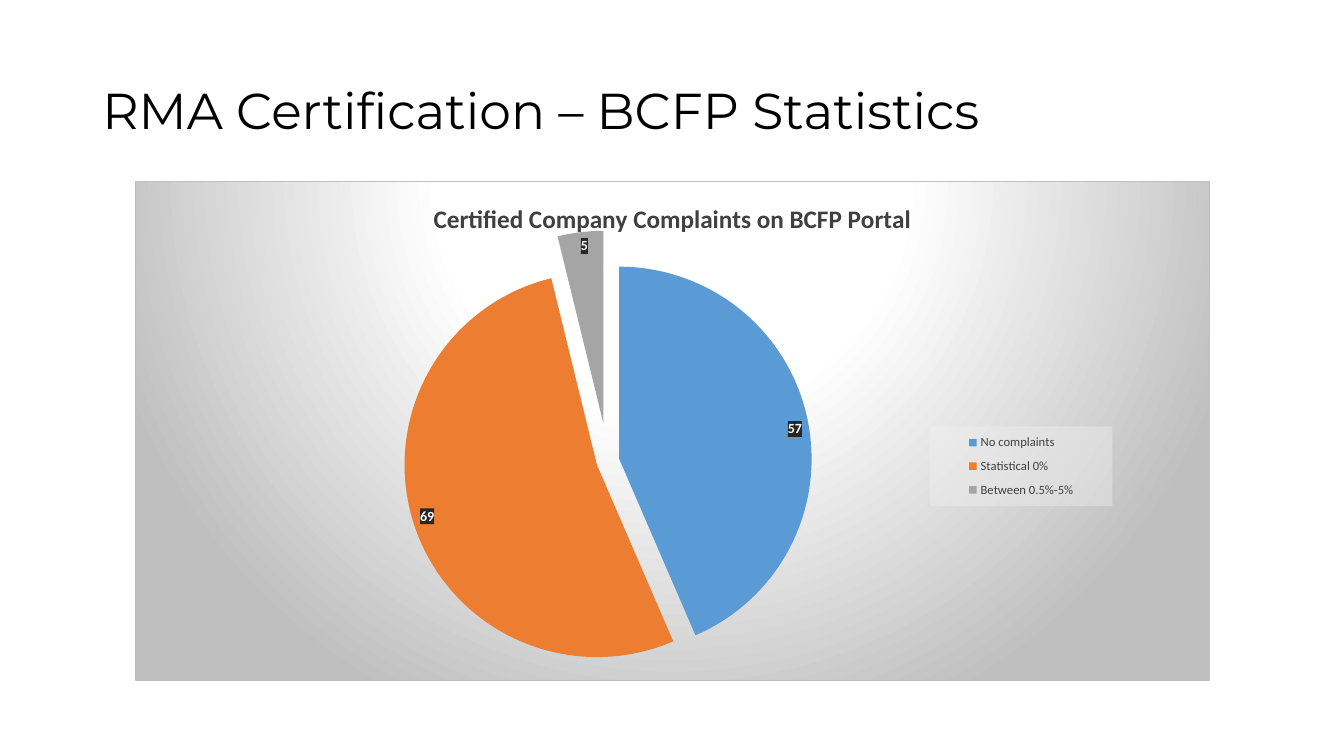
from pptx import Presentation
from pptx.chart.data import CategoryChartData
from pptx.dml.color import RGBColor
from pptx.enum.chart import XL_CHART_TYPE as ChartType
from pptx.enum.chart import XL_LABEL_POSITION as LabelPosition
from pptx.enum.chart import XL_LEGEND_POSITION as LegendPosition
from pptx.enum.text import MSO_ANCHOR as Anchor
from pptx.oxml import parse_xml
from pptx.oxml.ns import nsdecls, qn
from pptx.util import Pt

SLICES = [
    ("No complaints", 57, "5B9BD5"),
    ("Statistical 0%", 69, "ED7D31"),
    ("Between 0.5%-5%", 5, "A5A5A5"),
]
NAMESPACES = nsdecls("c", "a")


def paint(font, color, size, name, bold=False):
    font.name, font.size, font.bold = name, Pt(size), bold
    font.color.rgb = RGBColor.from_string(color)


def write(frame, text, color, size, name, bold=False, spacing=None):
    para = frame.paragraphs[0]
    para.line_spacing = spacing
    span = para.add_run()
    span.text = text
    paint(span.font, color, size, name, bold)


deck = Presentation()
deck.slide_width, deck.slide_height = Pt(960), Pt(540)
page = deck.slides.add_slide(deck.slide_layouts[6])

# Slide title
box = page.shapes.add_textbox(Pt(66), Pt(28.75), Pt(828), Pt(104.4))
box.text_frame.word_wrap = True
box.text_frame.vertical_anchor = Anchor.MIDDLE
write(box.text_frame, "RMA Certification – BCFP Statistics",
      "000000", 36, "Montserrat", spacing=0.9)

# Pie chart
data = CategoryChartData()
data.categories = [label for label, value, color in SLICES]
data.add_series("Series 1", [value for label, value, color in SLICES])
chart = page.shapes.add_chart(
    ChartType.PIE, Pt(96.5), Pt(129.6), Pt(767.5), Pt(357.1), data).chart
paint(chart.font, "000000", 10, "Calibri")
chart.has_title = True
write(chart.chart_title.text_frame, "Certified Company Complaints on BCFP Portal",
      "404040", 18, "Calibri", bold=True)
chart.chart_title.include_in_layout = False

# Slices, with the last one pulled further out
plot = chart.plots[0]
plot.vary_by_categories = True
series = plot.series[0]
for index, (label, value, color) in enumerate(SLICES):
    fill = series.points[index].format.fill
    fill.solid()
    fill.fore_color.rgb = RGBColor.from_string(color)
slices = series._element.findall(qn("c:dPt"))
for anchor, percent in [(slices[0], 6), (slices[-1].find(qn("c:spPr")), 20)]:
    anchor.addprevious(parse_xml(f'<c:explosion {NAMESPACES} val="{percent}"/>'))

# Value labels
labels = series.data_labels
labels.show_value = True
labels.show_percentage = False
labels.show_legend_key = False
labels.position = LabelPosition.INSIDE_END
paint(labels.font, "FFFFFF", 10, "Calibri", bold=True)

# Legend
chart.has_legend = True
legend = chart.legend
legend.position = LegendPosition.RIGHT
legend.include_in_layout = False
paint(legend.font, "404040", 9, "Calibri")

# Translucent backgrounds of labels and legend
for part, color, alpha in [(labels, "262626", 75), (legend, "F2F2F2", 39)]:
    part._element.find(qn("c:txPr")).addprevious(parse_xml(
        f'<c:spPr {NAMESPACES}><a:solidFill><a:srgbClr val="{color}">'
        f'<a:alpha val="{alpha * 1000}"/></a:srgbClr></a:solidFill>'
        '<a:ln><a:noFill/></a:ln></c:spPr>'))

# Places of plot and legend, as shares of the chart
chart_space = chart._chartSpace
plot_area = chart_space.chart.plotArea
for part, position, target, shares in [
    (plot_area, 0, '<c:layoutTarget val="inner"/>', (0.25, 0.15, 0.38, 0.82)),
    (legend._element, 1, "", (0.74, 0.49, 0.17, 0.16)),
]:
    for layout in part.findall(qn("c:layout")):
        part.remove(layout)
    places = "".join(f'<c:{key} val="{share}"/>' for key, share in zip("xywh", shares))
    part.insert(position, parse_xml(
        f'<c:layout {NAMESPACES}><c:manualLayout>{target}<c:xMode val="edge"/>'
        f'<c:yMode val="edge"/>{places}</c:manualLayout></c:layout>'))

# Radial chart background with a thin border
stops = "".join(
    f'<a:gs pos="{percent * 1000}"><a:srgbClr val="{color}"/></a:gs>'
    for percent, color in [(0, "FFFFFF"), (39, "FFFFFF"), (100, "BFBFBF")])
chart_space.chart.addnext(parse_xml(
    f'<c:spPr {NAMESPACES}><a:gradFill><a:gsLst>{stops}</a:gsLst><a:path path="circle">'
    '<a:fillToRect l="50000" t="-80000" r="50000" b="180000"/></a:path></a:gradFill>'
    f'<a:ln w="{Pt(0.75)}"><a:solidFill><a:srgbClr val="BFBFBF"/></a:solidFill></a:ln>'
    '</c:spPr>'))

deck.save("out.pptx")
